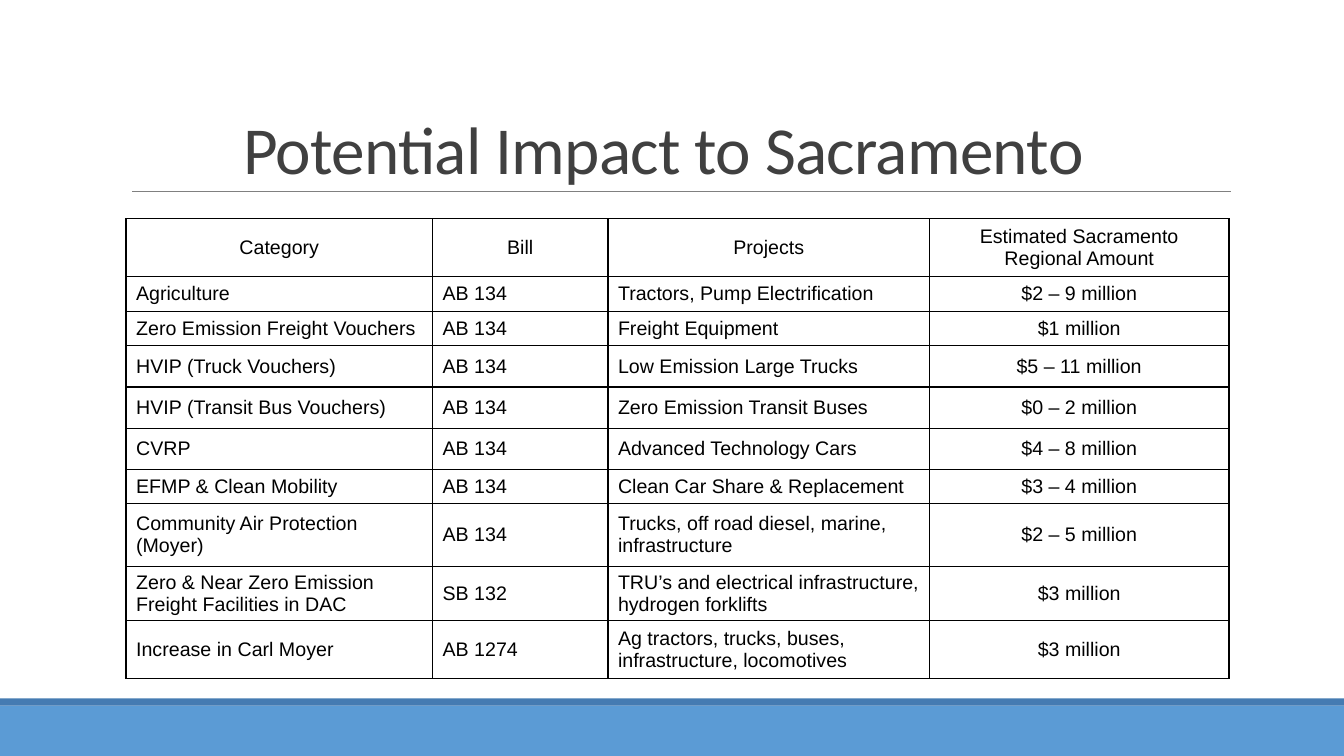
from lxml import etree
from pptx import Presentation
from pptx.dml.color import RGBColor
from pptx.enum.shapes import MSO_CONNECTOR, MSO_SHAPE
from pptx.enum.text import MSO_ANCHOR, PP_ALIGN
from pptx.oxml import parse_xml
from pptx.oxml.ns import nsdecls, qn
from pptx.util import Inches, Pt

RECT = MSO_SHAPE.RECTANGLE
STRAIGHT = MSO_CONNECTOR.STRAIGHT
LEFT, CENTER = PP_ALIGN.LEFT, PP_ALIGN.CENTER
MIDDLE, BOTTOM = MSO_ANCHOR.MIDDLE, MSO_ANCHOR.BOTTOM

SLIDE_W, SLIDE_H = 13.33, 7.5
COL_WIDTHS = [3.04, 1.74, 3.19, 2.97]
COL_ALIGNS = [LEFT, LEFT, LEFT, CENTER]
ROW_HEIGHTS = [0.57, 0.35, 0.34, 0.41, 0.41, 0.41, 0.34, 0.62, 0.54, 0.57]
ROWS = [
    ("Category", "Bill", "Projects", "Estimated Sacramento Regional Amount"),
    ("Agriculture", "AB 134", "Tractors, Pump Electrification", "$2 – 9 million"),
    ("Zero Emission Freight Vouchers", "AB 134", "Freight Equipment", "$1 million"),
    ("HVIP (Truck Vouchers)", "AB 134", "Low Emission Large Trucks", "$5 – 11 million"),
    ("HVIP (Transit Bus Vouchers)", "AB 134", "Zero Emission Transit Buses", "$0 – 2 million"),
    ("CVRP", "AB 134", "Advanced Technology Cars", "$4 – 8 million"),
    ("EFMP & Clean Mobility", "AB 134", "Clean Car Share & Replacement", "$3 – 4 million"),
    ("Community Air Protection (Moyer)", "AB 134",
     "Trucks, off road diesel, marine, infrastructure", "$2 – 5 million"),
    ("Zero & Near Zero Emission Freight Facilities in DAC", "SB 132",
     "TRU’s and electrical infrastructure, hydrogen forklifts", "$3 million"),
    ("Increase in Carl Moyer", "AB 1274",
     "Ag tractors, trucks, buses, infrastructure, locomotives", "$3 million"),
]


def rgb(color):
    return RGBColor.from_string(color)


def write(tf, text, font="Arial", size=14, color="000000", align=LEFT,
          line_spacing=None, tracking=None):
    """Fill a text frame with one formatted run; tracking is in points."""
    tf.word_wrap = True
    p = tf.paragraphs[0]
    p.alignment = align
    if line_spacing:
        p.line_spacing = line_spacing
    r = p.add_run()
    r.text = text
    r.font.name, r.font.size, r.font.bold = font, Pt(size), False
    r.font.color.rgb = rgb(color)
    if tracking:
        r.font._element.set("spc", str(round(tracking * 100)))


def add_borders(cell, color, width):
    tcPr = cell._tc.get_or_add_tcPr()
    for side in ("lnL", "lnR", "lnT", "lnB"):
        tcPr.append(parse_xml(
            f'<a:{side} {nsdecls("a")} w="{Pt(width)}"><a:solidFill>'
            f'<a:srgbClr val="{color}"/></a:solidFill></a:{side}>'))


class SlideBuilder:
    def __init__(self, slide, border="000000", border_width=1):
        self.s = slide
        self.border = border
        self.border_width = border_width

    def bar(self, x, y, w, h, color):
        sp = self.s.shapes.add_shape(RECT, Inches(x), Inches(y), Inches(w), Inches(h))
        sp.shadow.inherit = False
        sp.fill.solid()
        sp.fill.fore_color.rgb = rgb(color)
        sp.line.fill.background()

    def line(self, x1, y1, x2, y2, color, width):
        cx = self.s.shapes.add_connector(STRAIGHT, Inches(x1), Inches(y1),
                                         Inches(x2), Inches(y2))
        cx.line.color.rgb = rgb(color)
        cx.line.width = Pt(width)
        etree.SubElement(cx._element.spPr, qn("a:effectLst"))

    def text(self, x, y, w, h, text, anchor=MIDDLE, **fmt):
        tf = self.s.shapes.add_textbox(Inches(x), Inches(y), Inches(w), Inches(h)).text_frame
        tf.vertical_anchor = anchor
        write(tf, text, **fmt)

    def table(self, x, y, widths, heights, rows, aligns):
        """Draw a ruled table whose header row is centred."""
        table = self.s.shapes.add_table(
            len(rows), len(widths), Inches(x), Inches(y),
            Inches(sum(widths)), Inches(sum(heights))).table
        table.first_row = table.horz_banding = False
        for col, w in zip(table.columns, widths):
            col.width = Inches(w)
        for i, (row, h, texts) in enumerate(zip(table.rows, heights, rows)):
            row.height = Inches(h)
            for cell, text, align in zip(row.cells, texts, aligns):
                add_borders(cell, self.border, self.border_width)
                cell.fill.background()
                cell.vertical_anchor = MIDDLE
                write(cell.text_frame, text, align=align if i else CENTER)


def main():
    prs = Presentation()
    prs.slide_width, prs.slide_height = Inches(SLIDE_W), Inches(SLIDE_H)
    b = SlideBuilder(prs.slides.add_slide(prs.slide_layouts[6]))
    b.bar(0, 7, SLIDE_W, 0.5, "5B9BD5")
    b.bar(0, 6.93, SLIDE_W, 0.07, "457BB2")
    b.line(1.31, 1.9, 12.21, 1.9, "808080", 0.5)
    b.table(1.25, 2.17, COL_WIDTHS, ROW_HEIGHTS, ROWS, COL_ALIGNS)
    b.text(1.08, 0.33, 11, 1.59, "Potential Impact to Sacramento", anchor=BOTTOM,
           font="Calibri", size=48, color="404040", align=CENTER,
           line_spacing=0.85, tracking=-0.5)
    prs.save("out.pptx")


if __name__ == "__main__":
    main()
